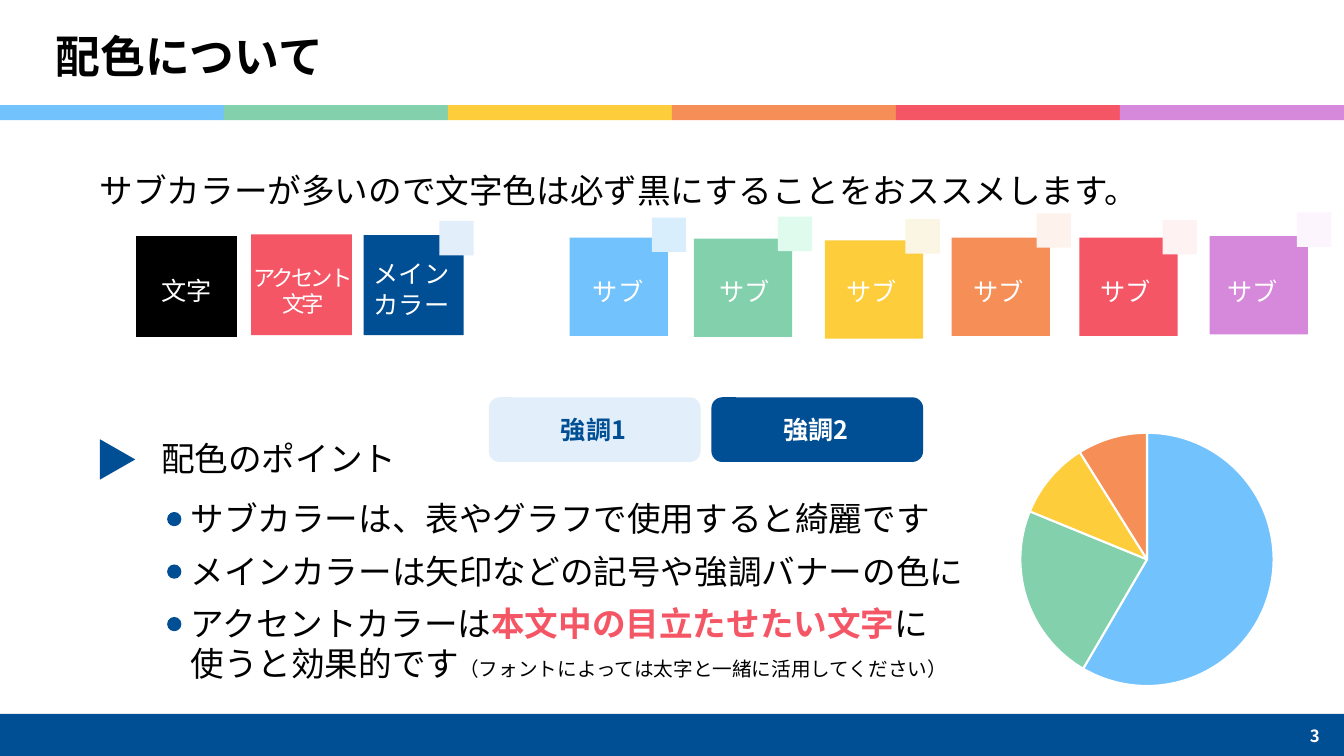
from dataclasses import dataclass

from lxml import etree
from pptx import Presentation
from pptx.chart.data import CategoryChartData
from pptx.dml.color import RGBColor
from pptx.enum.chart import XL_CHART_TYPE
from pptx.enum.shapes import MSO_SHAPE
from pptx.enum.text import MSO_ANCHOR, MSO_AUTO_SIZE, PP_ALIGN
from pptx.oxml.ns import qn
from pptx.util import Emu, Inches, Pt

RECTANGLE, ROUNDED = MSO_SHAPE.RECTANGLE, MSO_SHAPE.ROUNDED_RECTANGLE
TRIANGLE, OVAL = MSO_SHAPE.ISOSCELES_TRIANGLE, MSO_SHAPE.OVAL
LEFT, CENTER, RIGHT = PP_ALIGN.LEFT, PP_ALIGN.CENTER, PP_ALIGN.RIGHT
TOP, MIDDLE = MSO_ANCHOR.TOP, MSO_ANCHOR.MIDDLE

# The slide is a grid of 160 columns and 90 rows of square cells
COLUMNS, ROWS = 160, 90
CELL = Inches(1 / 12)
TITLE_ONLY = 5
FONT = "Noto Sans CJK JP"

BLACK, WHITE, MAIN, MAIN_TINT, ACCENT = "000000", "FFFFFF", "004E93", "E2EFFA", "F55665"
SUB_COLORS = ("72C2FD", "83D0AD", "FDCD3B", "F68F57", "F55665", "D688DB")


@dataclass(frozen=True)
class Box:
    """Place and size in grid cells."""
    left: float
    top: float
    width: float
    height: float

    def lengths(self) -> tuple:
        return tuple(Emu(round(cells * CELL))
                     for cells in (self.left, self.top, self.width, self.height))


@dataclass(frozen=True)
class Swatch:
    """A square of colour, with a label and perhaps a pale corner square."""
    color: str
    left: float
    top: float
    side: float
    label: str
    label_box: Box
    size: int = 18
    align: PP_ALIGN = LEFT
    spacing: int = 0
    tint: str = ""
    tint_left: float = 0
    tint_top: float = 0


@dataclass(frozen=True)
class Point:
    """A bulleted line: (text, format) runs in a box of given width and height."""
    width: float
    height: float
    runs: tuple


TINT_SIDE = 4.1
SUB_SIDE = 11.7
# Left, top, tint colour, tint left, tint top
SUB_PLACES = (
    (67.8, 28.3, "D9EEFD", 77.6, 25.9),
    (82.6, 28.4, "DEFBEE", 92.6, 25.8),
    (98.2, 28.6, "FBF5E3", 107.8, 26.1),
    (113.3, 28.3, "FEF2EC", 123.4, 25.4),
    (128.5, 28.3, "FEF2F3", 138.4, 26.2),
    (144, 28.1, "FCF5FD", 154.4, 25.3),
)
SWATCHES = [
    Swatch(BLACK, 16.2, 28.1, 12, "文字", Box(18, 32.2, 10.3, 4.8)),
    Swatch(ACCENT, 29.9, 27.9, 12, "アクセント\n文字", Box(27.5, 30.8, 17.2, 7.7),
           size=16, align=CENTER, spacing=-2),
    Swatch(MAIN, 43.3, 28, 11.9, "メイン\nカラー", Box(43.3, 30.2, 11.9, 8.5),
           tint=MAIN_TINT, tint_left=52.3, tint_top=26.3),
] + [
    Swatch(color, left, top, SUB_SIDE, "サブ", Box(69.4 + 15.1 * index, 32.3, 9.1, 4.8),
           tint=tint, tint_left=tint_left, tint_top=tint_top)
    for index, (color, (left, top, tint, tint_left, tint_top))
    in enumerate(zip(SUB_COLORS, SUB_PLACES))
]

POINTS = (
    Point(101.5, 6, (("サブカラーは、表やグラフで使用すると綺麗です", {}),)),
    Point(123.1, 6, (("メインカラーは矢印などの記号や強調バナーの色に", {}),)),
    Point(93.4, 10.9, (
        ("アクセントカラーは", {}),
        ("本文中の目立たせたい文字", {"color": ACCENT, "bold": True}),
        ("に使うと効果的です", {}),
        ("（フォントによっては太字と一緒に活用してください）", {"size": 14}),
    )),
)
POINT_TOP, POINT_STEP = 58.7, 6.25

# Label, fill, text colour
BANNERS = (("強調1", MAIN_TINT, MAIN), ("強調2", MAIN, WHITE))
BANNER_STEP = 26.5
PIE_VALUES = (59, 23, 10, 9)


def rgb(color: str) -> RGBColor:
    return RGBColor.from_string(color)


def add_run(paragraph, text: str, *, size: float = 24, color: str = BLACK,
            bold: bool = False, spacing: float = 0) -> None:
    run = paragraph.add_run()
    run.text = text
    font = run.font
    font.name, font.size, font.bold = FONT, Pt(size), bold
    font.color.rgb = rgb(color)
    properties = run._r.get_or_add_rPr()
    etree.SubElement(properties, qn("a:ea")).set("typeface", FONT)
    if spacing:
        properties.set("spc", str(round(spacing * 100)))


def write(frame, text: str, *, align: PP_ALIGN = LEFT, anchor: MSO_ANCHOR = TOP,
          wrap: bool = True, **style) -> None:
    frame.word_wrap = wrap
    frame.auto_size = MSO_AUTO_SIZE.NONE
    frame.vertical_anchor = anchor
    for index, line in enumerate(text.split("\n")):
        paragraph = frame.add_paragraph() if index else frame.paragraphs[0]
        paragraph.alignment = align
        add_run(paragraph, line, **style)


def add_text(slide, box: Box, text: str, **style):
    frame = slide.shapes.add_textbox(*box.lengths()).text_frame
    write(frame, text, **style)
    return frame


def add_block(slide, kind: MSO_SHAPE, box: Box, color: str):
    shape = slide.shapes.add_shape(kind, *box.lengths())
    shape.shadow.inherit = False
    shape.fill.solid()
    shape.fill.fore_color.rgb = rgb(color)
    shape.line.fill.background()
    return shape


def add_swatch(slide, swatch: Swatch) -> None:
    add_block(slide, RECTANGLE, Box(swatch.left, swatch.top, swatch.side, swatch.side),
              swatch.color)
    if swatch.tint:
        add_block(slide, RECTANGLE,
                  Box(swatch.tint_left, swatch.tint_top, TINT_SIDE, TINT_SIDE), swatch.tint)
    add_text(slide, swatch.label_box, swatch.label, size=swatch.size, color=WHITE,
             align=swatch.align, spacing=swatch.spacing)


def add_point(slide, point: Point, top: float) -> None:
    add_block(slide, OVAL, Box(19.9, top + 2.25, 1.7, 1.7), MAIN)
    (first_text, first_style), *others = point.runs
    frame = add_text(slide, Box(21.5, top, point.width, point.height), first_text, **first_style)
    for text, style in others:
        add_run(frame.paragraphs[0], text, **style)


def add_pie(slide, box: Box) -> None:
    chart_data = CategoryChartData()
    chart_data.categories = [str(number + 1) for number in range(len(PIE_VALUES))]
    chart_data.add_series("Series 1", PIE_VALUES)
    chart = slide.shapes.add_chart(XL_CHART_TYPE.PIE, *box.lengths(), chart_data).chart
    chart.has_legend = chart.has_title = False
    chart.font.name, chart.font.size = FONT, Pt(10)
    chart.font.color.rgb = rgb(BLACK)
    plot = chart.plots[0]
    plot.vary_by_categories = True
    for index, color in enumerate(SUB_COLORS[:len(PIE_VALUES)]):
        slice_format = plot.series[0].points[index].format
        slice_format.fill.solid()
        slice_format.fill.fore_color.rgb = rgb(color)
        slice_format.line.color.rgb = rgb(WHITE)
        slice_format.line.width = Pt(1.5)
    # Fix the plot area inside the chart
    plot_area = chart._chartSpace.find(".//" + qn("c:plotArea"))
    for layout in plot_area.findall(qn("c:layout")):
        plot_area.remove(layout)
    layout = etree.Element(qn("c:layout"))
    manual = etree.SubElement(layout, qn("c:manualLayout"))
    for tag, value in (("layoutTarget", "inner"), ("xMode", "edge"), ("yMode", "edge"),
                       ("x", "0.08"), ("y", "0.05"), ("w", "0.84"), ("h", "0.9")):
        etree.SubElement(manual, qn("c:" + tag)).set("val", value)
    plot_area.insert(0, layout)


def main() -> None:
    presentation = Presentation()
    presentation.slide_width, presentation.slide_height = COLUMNS * CELL, ROWS * CELL
    slide = presentation.slides.add_slide(presentation.slide_layouts[TITLE_ONLY])

    # Title, colour band and footer
    title = slide.shapes.title
    title.left, title.top, title.width, title.height = Box(5.4, 2.8, 34.7, 7.7).lengths()
    write(title.text_frame, "配色について", size=32, bold=True, wrap=False)
    band_width = COLUMNS / len(SUB_COLORS)
    for index, color in enumerate(SUB_COLORS):
        add_block(slide, RECTANGLE, Box(index * band_width, 12.5, band_width, 1.8), color)
    add_block(slide, RECTANGLE, Box(0, 85, COLUMNS, 5), MAIN)
    add_text(slide, Box(122.3, 85.2, 36, 4.8), "3", size=12, color=WHITE, bold=True,
             align=RIGHT, anchor=MIDDLE)

    # Palette
    add_text(slide, Box(10.7, 19.6, 139.9, 6),
             "サブカラーが多いので文字色は必ず黒にすることをおススメします。")
    for swatch in SWATCHES:
        add_swatch(slide, swatch)

    # Points on colour use
    add_block(slide, TRIANGLE, Box(11.6, 52.6, 4.8, 4.2), MAIN).rotation = 90
    add_text(slide, Box(18, 51.5, 92.5, 6), "配色のポイント")
    for index, point in enumerate(POINTS):
        add_point(slide, point, POINT_TOP + index * POINT_STEP)

    # Pie chart and emphasis banners
    add_pie(slide, Box(118.6, 49.8, 35.9, 33.6))
    for index, (label, fill, color) in enumerate(BANNERS):
        left = 58.2 + index * BANNER_STEP
        add_block(slide, ROUNDED, Box(left, 47.3, 25.2, 7.7), fill)
        add_text(slide, Box(left - 0.2, 48.7, 25.3, 4.8), label, size=18, color=color,
                 bold=True, align=CENTER)

    presentation.save("out.pptx")


if __name__ == "__main__":
    main()
